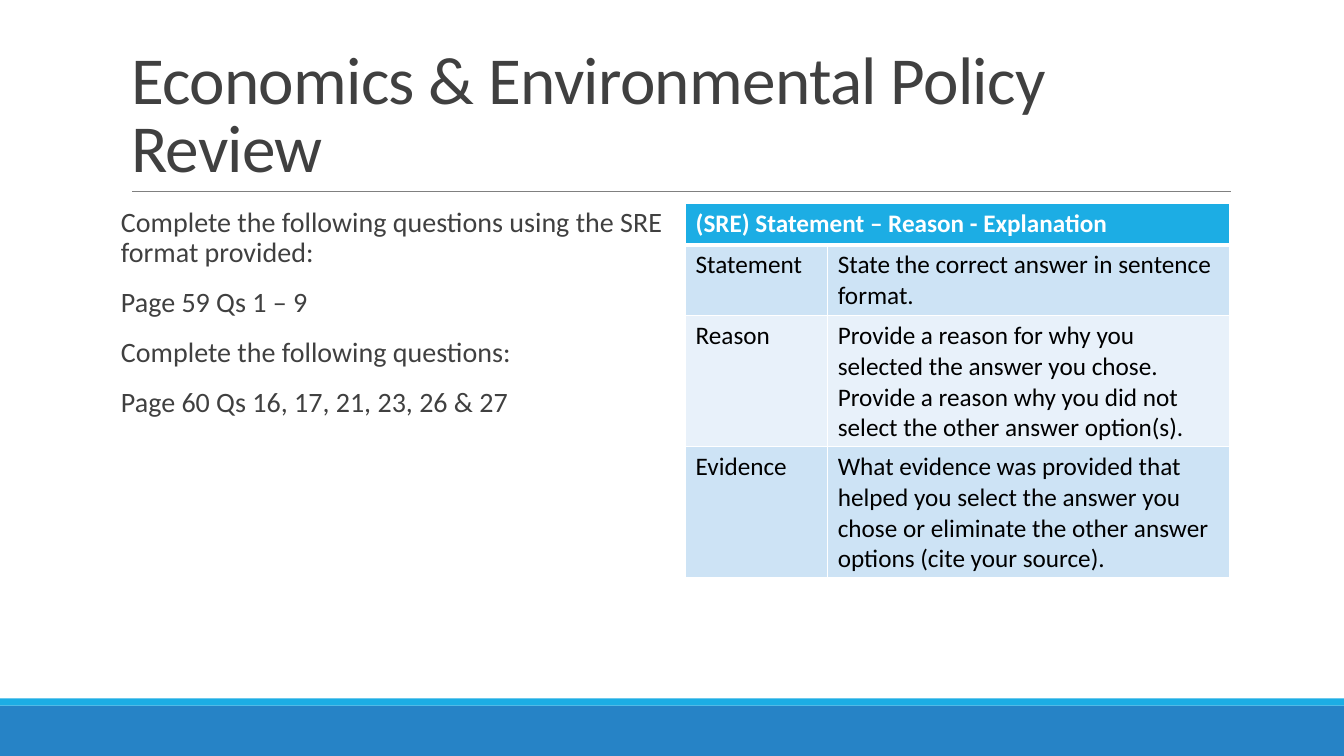
from lxml.etree import SubElement
from pptx import Presentation
from pptx.dml.color import RGBColor
from pptx.enum.shapes import MSO_CONNECTOR as Connector, MSO_SHAPE as Shape
from pptx.enum.text import MSO_ANCHOR as Anchor, MSO_AUTO_SIZE as AutoSize, PP_ALIGN as Align
from pptx.oxml.ns import qn
from pptx.util import Inches, Pt

WHITE, BLACK, GREY, TEXT = "FFFFFF", "000000", "808080", "404040"
SKY, BLUE, BAND_DARK, BAND_LIGHT = "1CADE4", "2683C6", "CDE3F5", "E8F1FA"

TITLE = "Economics & Environmental Policy\vReview"
TASKS = [
    "Complete the following questions using the SRE format provided:",
    "Page 59 Qs 1 – 9",
    "Complete the following questions:",
    "Page 60 Qs 16, 17, 21, 23, 26 & 27",
]
SRE_ROWS = [
    ("(SRE) Statement – Reason - Explanation", ""),
    ("Statement", "State the correct answer in sentence format."),
    ("Reason", "Provide a reason for why you selected the answer you chose. "
               "Provide a reason why you did not select the other answer option(s)."),
    ("Evidence", "What evidence was provided that helped you select the answer you "
                 "chose or eliminate the other answer options (cite your source)."),
]
COLUMN_WIDTHS = (1.41, 3.99)
ROW_HEIGHT = 0.41


def rgb(value):
    """Turn a hex string into a colour."""
    return RGBColor.from_string(value)


def apply(target, values):
    """Set every attribute named in a dict of format values."""
    for name, value in values.items():
        setattr(target, name, value)


def style_font(font, size, color, bold=False):
    """Give a font its face, size, colour and weight."""
    apply(font, {"name": "Calibri", "size": Pt(size), "bold": bold})
    font.color.rgb = rgb(color)


def add_band(slide, top, height, color):
    """Draw a full-width footer band."""
    band = slide.shapes.add_shape(
        Shape.RECTANGLE, 0, Inches(top), Inches(13.33), Inches(height))
    band.shadow.inherit = False
    band.fill.solid()
    band.fill.fore_color.rgb = rgb(color)
    band.line.fill.background()


def add_rule(slide, left, right, top):
    """Draw the thin line under the title."""
    rule = slide.shapes.add_connector(
        Connector.STRAIGHT, Inches(left), Inches(top), Inches(right), Inches(top))
    rule.line.color.rgb = rgb(GREY)
    rule.line.width = Pt(0.5)
    SubElement(rule._element.spPr, qn("a:effectLst"))


def fill_title(slide):
    """Place and format the title placeholder."""
    title = slide.shapes.title
    apply(title, {"left": Inches(1.2), "top": Inches(0.31),
                  "width": Inches(11), "height": Inches(1.59)})
    frame = title.text_frame
    frame.text = TITLE
    apply(frame, {"vertical_anchor": Anchor.BOTTOM, "word_wrap": True,
                  "auto_size": AutoSize.NONE})
    paragraph = frame.paragraphs[0]
    apply(paragraph, {"alignment": Align.LEFT, "line_spacing": 0.85})
    for run in paragraph.runs:
        style_font(run.font, 48, TEXT)
        run._r.get_or_add_rPr().set("spc", "-50")


def add_tasks(slide):
    """Write the list of review tasks."""
    box = slide.shapes.add_textbox(Inches(1.2), Inches(2.02), Inches(5.4), Inches(4.4))
    frame = box.text_frame
    apply(frame, {"word_wrap": True, "margin_left": 0, "margin_right": 0})
    for index, task in enumerate(TASKS):
        paragraph = frame.add_paragraph() if index else frame.paragraphs[0]
        paragraph.text = task
        apply(paragraph, {"line_spacing": 0.9, "space_after": Pt(2),
                          "space_before": Pt(12 if index else 0)})
        style_font(paragraph.font, 20, TEXT)


def add_borders(cell, widths):
    """Draw white cell borders with a width in points for each side."""
    properties = cell._tc.get_or_add_tcPr()
    for side, width in widths.items():
        border = SubElement(properties, qn(f"a:ln{side}"), w=str(Pt(width)))
        fill = SubElement(border, qn("a:solidFill"))
        SubElement(fill, qn("a:srgbClr"), val=WHITE)


def add_sre_table(slide):
    """Build the Statement, Reason and Evidence table."""
    table = slide.shapes.add_table(
        len(SRE_ROWS), len(COLUMN_WIDTHS), Inches(6.8), Inches(2.02),
        Inches(sum(COLUMN_WIDTHS)), Inches(ROW_HEIGHT * len(SRE_ROWS))).table
    for column, width in zip(table.columns, COLUMN_WIDTHS):
        column.width = Inches(width)
    table.cell(0, 0).merge(table.cell(0, 1))
    for row, texts in enumerate(SRE_ROWS):
        header = row == 0
        band = SKY if header else BAND_DARK if row % 2 else BAND_LIGHT
        for column, text in enumerate(texts):
            cell = table.cell(row, column)
            add_borders(cell, {"L": 1, "R": 1, "T": 3 if row == 1 else 1,
                               "B": 3 if header else 1})
            cell.fill.solid()
            cell.fill.fore_color.rgb = rgb(band)
            cell.text = text
            style_font(cell.text_frame.paragraphs[0].font, 18,
                       WHITE if header else BLACK, header)


def main():
    """Build and save the review slide."""
    deck = Presentation()
    apply(deck, {"slide_width": Inches(13.33), "slide_height": Inches(7.5)})
    slide = deck.slides.add_slide(deck.slide_layouts[5])
    add_band(slide, 7, 0.5, BLUE)
    add_band(slide, 6.93, 0.07, SKY)
    add_rule(slide, 1.31, 12.21, 1.9)
    fill_title(slide)
    add_tasks(slide)
    add_sre_table(slide)
    deck.save("out.pptx")


if __name__ == "__main__":
    main()
